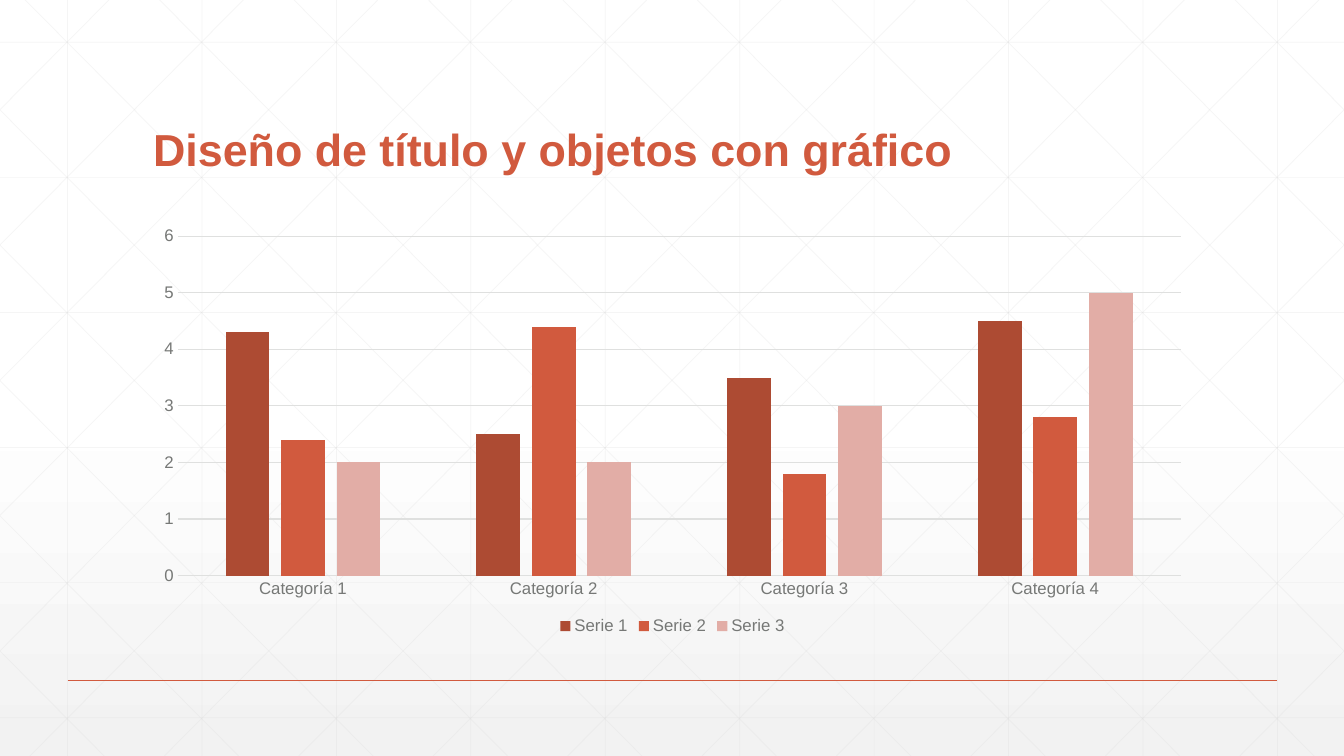
from copy import deepcopy

from pptx import Presentation
from pptx.chart.data import CategoryChartData
from pptx.dml.color import RGBColor
from pptx.enum.chart import XL_CHART_TYPE as Kind, XL_LEGEND_POSITION as Place
from pptx.enum.chart import XL_TICK_MARK as Tick
from pptx.enum.shapes import MSO_CONNECTOR as Link
from pptx.enum.text import MSO_ANCHOR as Anchor
from pptx.oxml.ns import qn
from pptx.util import Inches, Pt

WHITE = RGBColor(0xFF, 0xFF, 0xFF)
PALE = RGBColor(0xF2, 0xF2, 0xF2)
MESH = RGBColor(0xD9, 0xD9, 0xD9)
RULE = RGBColor(0xDF, 0xE0, 0xDF)
GREY = RGBColor(0x76, 0x78, 0x76)
DARK = RGBColor(0x2D, 0x2E, 0x2D)
BRICK = RGBColor(0xAD, 0x4B, 0x33)
RUST = RGBColor(0xD1, 0x5A, 0x3E)
ROSE = RGBColor(0xE2, 0xAD, 0xA6)
FONT = "Arial"
W, H = 13.33, 7.5

deck = Presentation()
deck.slide_width, deck.slide_height = Inches(W), Inches(H)
slide = deck.slides.add_slide(deck.slide_layouts[6])

# Background: white to just past the middle, then pale grey
fill = slide.background.fill
fill.gradient()
fill.gradient_angle = 270
stops = slide.background._cSld.find(".//" + qn("a:gsLst"))
stops.insert(0, deepcopy(stops[0]))
for stop, (pos, color) in zip(fill.gradient_stops,
                              [(0, WHITE), (0.53, WHITE), (1, PALE)]):
    stop.position = pos
    stop.color.rgb = color


def add_line(group, start, end, color, width, alpha=100):
    """Add a straight line without shadow; alpha is its opacity in percent."""
    line = group.add_connector(Link.STRAIGHT, *map(Inches, start + end))
    line.line.color.rgb = color
    line.line.width = Pt(width)
    props = line._element.spPr
    if alpha < 100:
        tint = props.find(".//" + qn("a:srgbClr"))
        tint.makeelement(qn("a:alpha"))
        node = tint.makeelement(qn("a:alpha"), {"val": str(alpha * 1000)})
        tint.append(node)
    props.append(props.makeelement(qn("a:effectLst")))


# Mesh: verticals, horizontals and mirrored diagonals, clipped to the slide
STEP = 4 / 3
RUN = 7.45
SLOPE = H / RUN
mesh = []
for i in range(10):
    x = 0.67 + i * STEP
    mesh.append(((x, 0), (x, H)))
for i in range(6):
    y = 0.42 + i * 1.34
    mesh.append(((0, y), (W, y)))
for i in range(-5, 10):
    top = 0.25 + i * STEP
    left, right = max(top, 0), min(top + RUN, W)
    y1, y2 = (left - top) * SLOPE, (right - top) * SLOPE
    mesh.append(((left, y1), (right, y2)))
    mesh.append(((W - left, y1), (W - right, y2)))

group = slide.shapes.add_group_shape().shapes
for start, end in mesh:
    add_line(group, start, end, MESH, 0.5, 25)
add_line(slide.shapes, (0.67, 6.75), (12.67, 6.75), RUST, 1)

# Title
box = slide.shapes.add_textbox(Inches(1.42), Inches(0.55),
                               Inches(10.5), Inches(1.25))
frame = box.text_frame
frame.word_wrap = True
frame.vertical_anchor = Anchor.BOTTOM
para = frame.paragraphs[0]
para.line_spacing = 0.9
run = para.add_run()
run.text = "Diseño de título y objetos con gráfico"
run.font.name, run.font.size, run.font.bold = FONT, Pt(32), True
run.font.color.rgb = RUST

# Chart
SERIES = [
    ("Serie 1", (4.3, 2.5, 3.5, 4.5), BRICK),
    ("Serie 2", (2.4, 4.4, 1.8, 2.8), RUST),
    ("Serie 3", (2, 2, 3, 5), ROSE),
]
data = CategoryChartData()
data.categories = [f"Categoría {n}" for n in range(1, 5)]
for name, vals, _ in SERIES:
    data.add_series(name, vals)
chart = slide.shapes.add_chart(Kind.COLUMN_CLUSTERED, Inches(1.42), Inches(2.17),
                               Inches(10.5), Inches(4.17), data).chart
chart.has_title = False
chart.font.name, chart.font.size = FONT, Pt(10)
chart.font.color.rgb = DARK

plot = chart.plots[0]
plot.gap_width, plot.overlap = 219, -27
plot.vary_by_categories = False
for bars, (_, _, color) in zip(plot.series, SERIES):
    bars.format.fill.solid()
    bars.format.fill.fore_color.rgb = color

chart.has_legend = True
legend = chart.legend
legend.position = Place.BOTTOM
legend.include_in_layout = False

cats, vals = chart.category_axis, chart.value_axis
for axis in (cats, vals):
    axis.major_tick_mark = axis.minor_tick_mark = Tick.NONE
for font in (cats.tick_labels.font, vals.tick_labels.font, legend.font):
    font.name, font.size = FONT, Pt(12)
    font.color.rgb = GREY
vals.minimum_scale, vals.maximum_scale, vals.major_unit = 0, 6, 1
vals.format.line.fill.background()
for line in (cats.format.line, vals.major_gridlines.format.line):
    line.color.rgb = RULE
    line.width = Pt(0.75)

deck.save("out.pptx")
